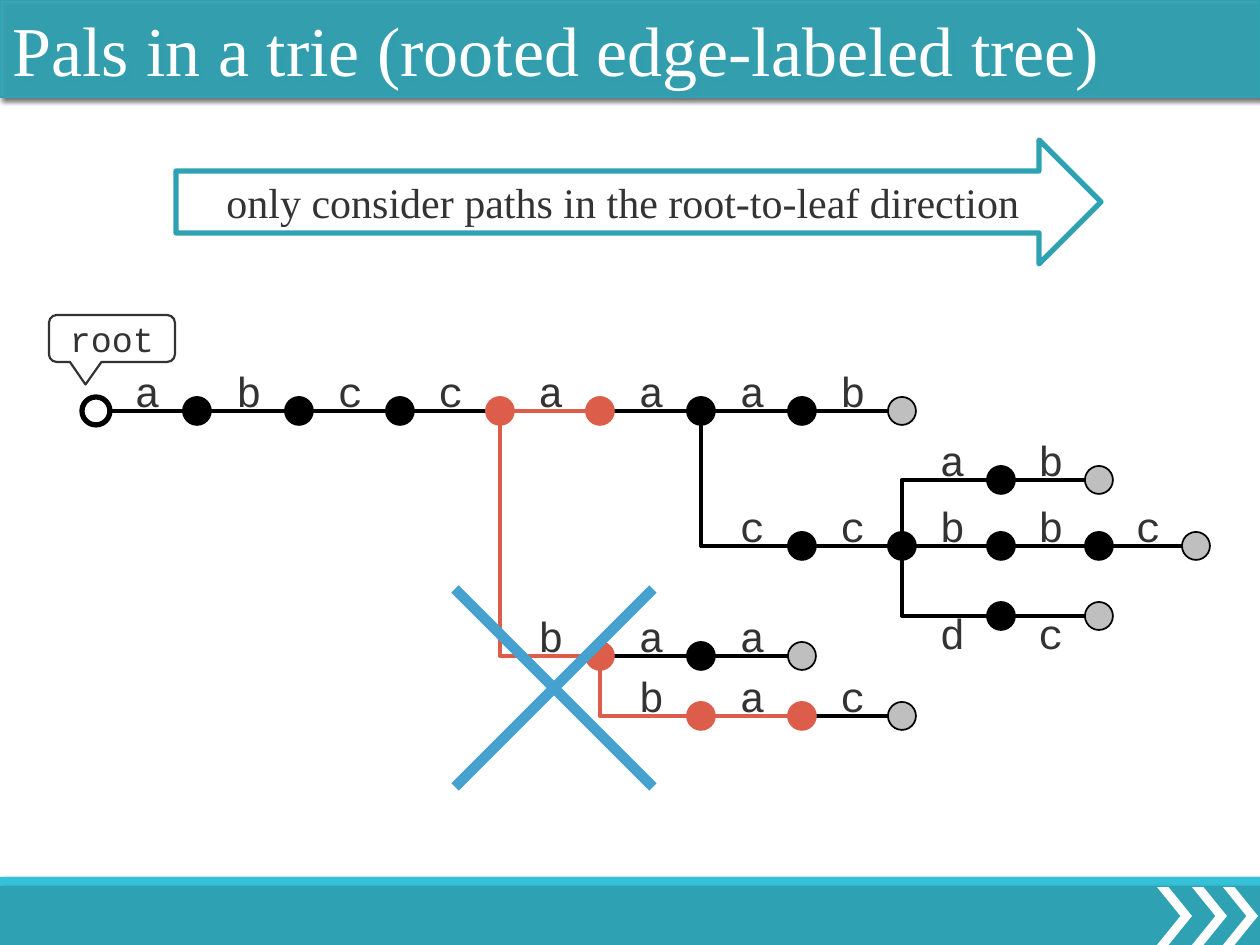
from itertools import pairwise

from lxml.etree import SubElement
from pptx import Presentation
from pptx.dml.color import RGBColor
from pptx.enum.shapes import MSO_CONNECTOR, MSO_SHAPE
from pptx.enum.text import MSO_ANCHOR, MSO_AUTO_SIZE, PP_ALIGN
from pptx.oxml.ns import qn
from pptx.util import Emu, Pt

COLORS = {
    "teal": "2EA2B3", "cyan": "35C1D7", "white": "FFFFFF", "black": "000000",
    "red": "DC5D4A", "gray": "BFBFBF", "text": "333333", "blue": "45A1CF",
}
NODE_COLORS = {"k": "black", "r": "red", "g": "gray"}
SERIF, MONO = "Times New Roman", "Courier New"
COLUMNS = [96, 197, 299, 400, 500, 600, 701, 802, 902, 1001, 1099, 1196]
RADIUS = 14
ABOVE, BELOW = -52, -15

STEM = (411, "abccaaab", "kkkrrkkg")
BRANCHES = [
    (6, 411, 546, "ccbbc", "kkkkg", "black", ABOVE),
    (8, 546, 480, "ab", "kg", "black", ABOVE),
    (8, 546, 616, "dc", "kg", "black", BELOW),
    (4, 411, 656, "baa", "rkg", "red", ABOVE),
    (5, 656, 716, "bac", "rrg", "red", ABOVE),
]


def px(*values):
    return [Emu(round(value * 914400 / 126)) for value in values]


def rgb(name):
    return RGBColor.from_string(COLORS[name])


def style(shape, fill=None, line=None, width=1):
    if fill:
        shape.fill.solid()
        shape.fill.fore_color.rgb = rgb(fill)
    else:
        shape.fill.background()
    if line:
        shape.line.color.rgb = rgb(line)
        shape.line.width = Pt(width)
    else:
        shape.line.fill.background()


def add_box(page, kind, box, fill=None, line=None, width=1):
    shape = page.shapes.add_shape(kind, *px(*box))
    shape.shadow.inherit = False
    style(shape, fill, line, width)
    return shape


def add_shadow(shape):
    shape.shadow.inherit = False
    effects = shape._element.spPr.find(qn("a:effectLst"))
    shadow = SubElement(effects, qn("a:outerShdw"), blurRad=str(Pt(3)),
                        dist=str(Pt(2)), dir="2700000", rotWithShape="0")
    color = SubElement(shadow, qn("a:srgbClr"), val=COLORS["black"])
    SubElement(color, qn("a:alpha"), val="60000")


def write(shape, text, size, font, color, align=PP_ALIGN.CENTER):
    shape.text_frame.text = text
    para = shape.text_frame.paragraphs[0]
    para.alignment = align
    para.font.size = Pt(size)
    para.font.name = font
    para.font.color.rgb = rgb(color)


def add_line(page, start, end, color, width=2.25, kind=MSO_CONNECTOR.STRAIGHT):
    line = page.shapes.add_connector(kind, *px(*start, *end))
    line.line.color.rgb = rgb(color)
    line.line.width = Pt(width)
    properties = line._element.spPr
    SubElement(properties, qn("a:effectLst"))
    if kind == MSO_CONNECTOR.ELBOW:
        properties.find(qn("a:prstGeom")).set("prst", "bentConnector2")


def add_title(page, box):
    title = page.shapes.title
    title.left, title.top, title.width, title.height = px(*box)
    style(title, "teal", "teal")
    fill_color = title._element.spPr.find(qn("a:solidFill"))[0]
    SubElement(fill_color, qn("a:alpha"), val="92000")
    add_shadow(title)
    write(title, "Pals in a trie (rooted edge-labeled tree)", 40, SERIF, "white",
          PP_ALIGN.LEFT)
    title.text_frame.auto_size = MSO_AUTO_SIZE.NONE
    title.text_frame.vertical_anchor = MSO_ANCHOR.TOP


def add_footer(page, box):
    left, top, width, height = box
    strip = add_box(page, MSO_SHAPE.RECTANGLE, (left, top, width, 30), "cyan")
    band = add_box(page, MSO_SHAPE.RECTANGLE,
                   (left, top + 10, width, height - 10), "teal", "teal")
    for bar in (strip, band):
        add_shadow(bar)
    for offset in (103, 68, 37):
        chevron = add_box(page, MSO_SHAPE.CHEVRON,
                          (left + width - offset, top + 10, 35, height - 10), "white")
        chevron.adjustments[0] = 0.67


def add_direction_arrow(page, box):
    arrow = add_box(page, MSO_SHAPE.RIGHT_ARROW, box, line="teal", width=3)
    write(arrow, "only consider paths in the root-to-leaf direction", 24, SERIF, "text")
    arrow.text_frame.vertical_anchor = MSO_ANCHOR.MIDDLE


def add_node(page, x, y, fill, line=None, width=1):
    box = (x - RADIUS, y - RADIUS, 2 * RADIUS, 2 * RADIUS)
    add_box(page, MSO_SHAPE.OVAL, box, fill, line or fill, width)


def add_label(page, x, y, letter):
    label = page.shapes.add_textbox(*px(x - 25, y, 50, 63))
    label.text_frame.word_wrap = False
    write(label, letter, 24, MONO, "text")


def add_chain(page, first, y, letters, kinds, label_shift=ABOVE):
    columns = COLUMNS[first:first + len(kinds)]
    nodes = [(x, NODE_COLORS[kind]) for x, kind in zip(columns, kinds)]
    for (x, color), (next_x, next_color) in pairwise(nodes):
        edge = "red" if color == next_color == "red" else "black"
        add_line(page, (x + RADIUS, y), (next_x - RADIUS, y), edge)
    for x, color in nodes:
        add_node(page, x, y, color, "black" if color == "gray" else color)
    for index, letter in enumerate(letters, first):
        middle = (COLUMNS[index - 1] + COLUMNS[index]) / 2
        add_label(page, middle + 1, y + label_shift, letter)


def add_trie(page):
    for parent, parent_y, y, letters, kinds, color, label_shift in BRANCHES:
        exit_y = parent_y + (RADIUS if y > parent_y else -RADIUS)
        add_line(page, (COLUMNS[parent + 1] - RADIUS, y), (COLUMNS[parent], exit_y),
                 color, kind=MSO_CONNECTOR.ELBOW)
        add_chain(page, parent + 1, y, letters, kinds, label_shift)
    y, letters, kinds = STEM
    root_x = COLUMNS[0]
    add_line(page, (root_x + RADIUS, y), (COLUMNS[1] - RADIUS, y), "black")
    add_chain(page, 1, y, letters, kinds)
    add_node(page, root_x, y, "white", "black", 3)
    callout = add_box(page, MSO_SHAPE.ROUNDED_RECTANGULAR_CALLOUT,
                      (49, 315, 126, 47), "white", "text", 1.25)
    callout.adjustments[0] = -0.21
    callout.adjustments[1] = 0.98
    write(callout, "root", 20, MONO, "text")
    callout.text_frame.vertical_anchor = MSO_ANCHOR.MIDDLE


def add_cross(page, box):
    left, top, width, height = box
    right, bottom = left + width, top + height
    add_line(page, (left, top), (right, bottom), "blue", 6)
    add_line(page, (left, bottom), (right, top), "blue", 6)


def main():
    deck = Presentation()
    deck.slide_width, deck.slide_height = px(1260, 945)
    page = deck.slides.add_slide(deck.slide_layouts[5])
    add_footer(page, (0, 877, 1260, 68))
    add_title(page, (0, 0, 1260, 97))
    add_direction_arrow(page, (176, 140, 925, 124))
    add_trie(page)
    add_cross(page, (455, 589, 198, 198))
    deck.save("out.pptx")


if __name__ == "__main__":
    main()
